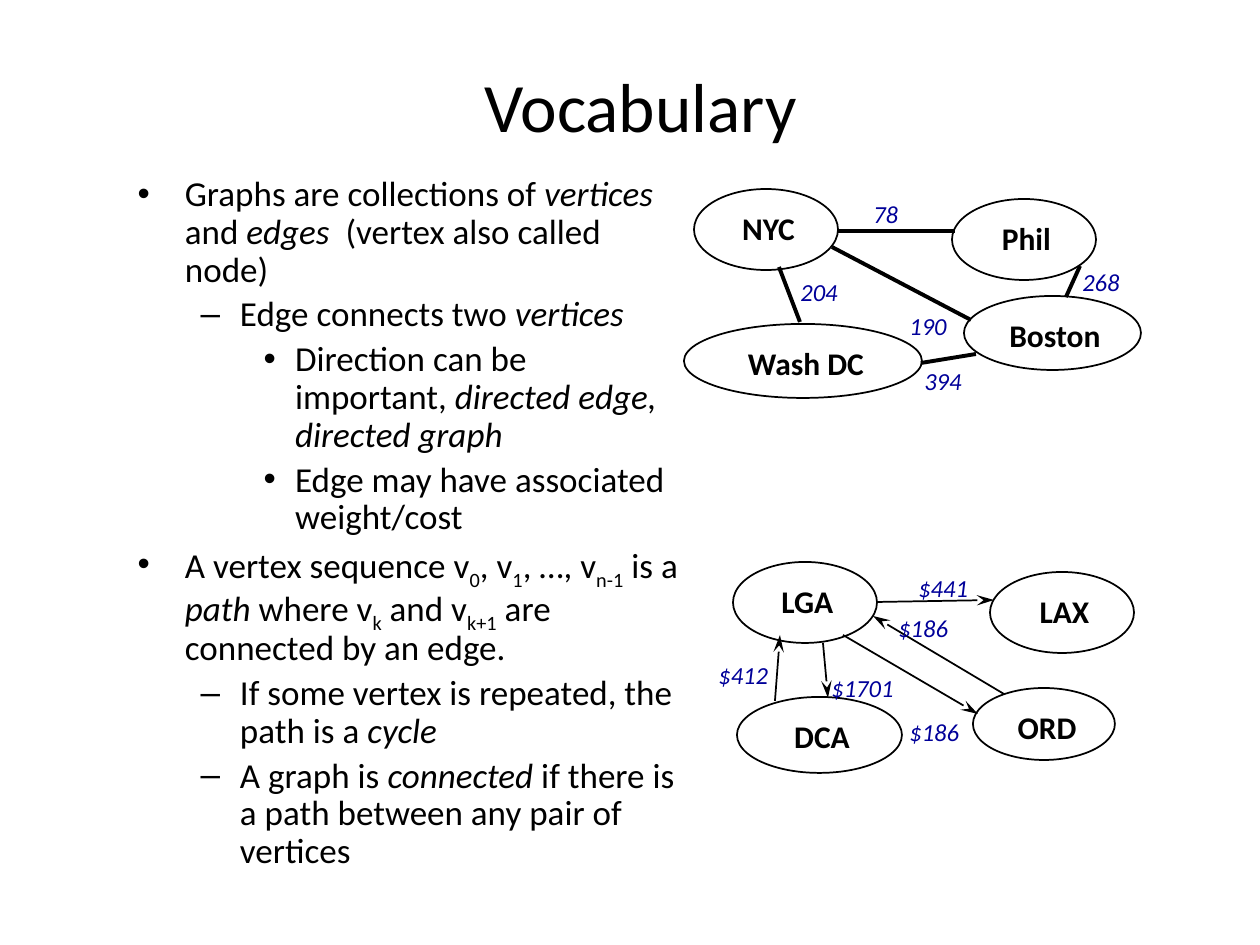
import pptx
import pptx.util
import pptx.dml.color
import pptx.enum.shapes
import pptx.enum.text
import pptx.oxml
import pptx.oxml.ns

PX = 914400 // 126
FONT = "Calibri"
BLACK = pptx.dml.color.RGBColor(0, 0, 0)
NAVY = pptx.dml.color.RGBColor(0, 0, 0x99)

TITLE = "Vocabulary"
ITALIC, SUB = "italic", "subscript"
# level, then spans: plain text or (text, style)
BULLETS = [
    (0, ["Graphs are collections of ", ("vertices", ITALIC), " and ", ("edges  ", ITALIC),
         "(vertex also called node)"]),
    (1, ["Edge connects two ", ("vertices", ITALIC)]),
    (2, ["Direction can be important, ", ("directed edge, directed graph", ITALIC)]),
    (2, ["Edge may have associated weight/cost"]),
    (0, ["A vertex sequence v", ("0", SUB), ", v", ("1", SUB), ", …, v", ("n-1", SUB), " is a ",
         ("path", ITALIC), " where v", ("k", SUB), " and v", ("k+1", SUB),
         " are connected by an edge."]),
    (1, ["If some vertex is repeated, the path is a ", ("cycle", ITALIC)]),
    (1, ["A graph is ", ("connected", ITALIC),
         " if there is a path between any pair of vertices"]),
]

# Vertices: name, left, top, width, height
# Edges: from x, from y, to x, to y
# Weights: text, left, top
DISTANCES = {
    "vertices": [("NYC", 694, 189, 144, 81), ("Phil", 952, 199, 144, 81),
                 ("Boston", 964, 296, 177, 74), ("Wash DC", 684, 324, 238, 74)],
    "edges": [(779, 267, 800, 322), (837, 231, 955, 231), (832, 247, 971, 320),
              (1080, 266, 1066, 297), (921, 363, 976, 354)],
    "weights": [("204", 788, 271), ("78", 861, 193), ("190", 897, 305),
                ("268", 1070, 261), ("394", 912, 360)],
    "line": 2.25, "directed": False,
}
FARES = {
    "vertices": [("LGA", 733, 562, 144, 81), ("LAX", 990, 572, 144, 81),
                 ("ORD", 973, 688, 142, 72), ("DCA", 737, 697, 165, 76)],
    "edges": [(823, 643, 828, 698), (843, 635, 978, 714), (877, 602, 994, 600),
              (1004, 694, 873, 616), (775, 701, 780, 635)],
    "weights": [("$186", 897, 711), ("$186", 886, 607), ("$412", 706, 654),
                ("$1701", 819, 667), ("$441", 906, 567)],
    "line": 1, "directed": True,
}


def place(shape, left, top, width, height):
    shape.left, shape.top = left * PX, top * PX
    shape.width, shape.height = width * PX, height * PX


def style(font, size, color=BLACK, bold=None, italic=None):
    font.name, font.size = FONT, pptx.util.Pt(size)
    font.color.rgb, font.bold, font.italic = color, bold, italic


def add_label(shapes, text, left, top, width, height, align, **look):
    box = shapes.add_textbox(left * PX, top * PX, width * PX, height * PX)
    box.text_frame.word_wrap = True
    box.text_frame.text = text
    para = box.text_frame.paragraphs[0]
    para.alignment = align
    style(para.runs[0].font, **look)


def add_vertex(page, name, left, top, width, height):
    group = page.shapes.add_group_shape()
    oval = group.shapes.add_shape(pptx.enum.shapes.MSO_SHAPE.OVAL,
                                  left * PX, top * PX, width * PX, height * PX)
    oval.shadow.inherit = False
    oval.fill.background()
    oval.line.color.rgb, oval.line.width = BLACK, pptx.util.Pt(1)
    label_width = round(width * 0.8)
    label_left = left + (width - label_width) // 2 + 3
    add_label(group.shapes, name, label_left, top + 14, label_width, 50,
              pptx.enum.text.PP_ALIGN.CENTER, size=18, bold=True)


def add_edge(page, ends, width, directed):
    edge = page.shapes.add_connector(pptx.enum.shapes.MSO_CONNECTOR.STRAIGHT,
                                     *[end * PX for end in ends])
    edge.line.color.rgb, edge.line.width = BLACK, pptx.util.Pt(width)
    if directed:
        head = pptx.oxml.parse_xml(
            f'<a:tailEnd {pptx.oxml.ns.nsdecls("a")} type="stealth" w="med" len="lg"/>')
        edge.line._get_or_add_ln().append(head)
    edge._element.spPr.append(
        pptx.oxml.parse_xml(f'<a:effectLst {pptx.oxml.ns.nsdecls("a")}/>'))


def add_graph(page, graph):
    for vertex in graph["vertices"]:
        add_vertex(page, *vertex)
    for ends in graph["edges"]:
        add_edge(page, ends, graph["line"], graph["directed"])
    for text, left, top in graph["weights"]:
        add_label(page.shapes, text, left, top, 103 if len(text) > 4 else 87, 42,
                  pptx.enum.text.PP_ALIGN.LEFT, size=14, color=NAVY, italic=True)


def fill_title(title):
    place(title, 105, 63, 1071, 84)
    title.text_frame.text = TITLE
    title.text_frame.auto_size = pptx.enum.text.MSO_AUTO_SIZE.NONE
    title.text_frame.vertical_anchor = pptx.enum.text.MSO_ANCHOR.MIDDLE
    style(title.text_frame.paragraphs[0].runs[0].font, 39.6)


def fill_body(body):
    place(body, 125, 170, 567, 743)
    frame = body.text_frame
    frame.auto_size = pptx.enum.text.MSO_AUTO_SIZE.NONE
    for index, (level, spans) in enumerate(BULLETS):
        para = frame.add_paragraph() if index else frame.paragraphs[0]
        para.level, para.line_spacing = level, 0.9
        for item in spans:
            text, look = (item, None) if isinstance(item, str) else item
            span = para.add_run()
            span.text = text
            style(span.font, 20, italic=look == ITALIC)
            if look == SUB:
                span.font._element.set("baseline", "-25000")


def main():
    deck = pptx.Presentation()
    deck.slide_width, deck.slide_height = pptx.util.Inches(10), pptx.util.Inches(7.5)
    page = deck.slides.add_slide(deck.slide_layouts[1])
    fill_title(page.shapes.title)
    fill_body(page.placeholders[1])
    for graph in (DISTANCES, FARES):
        add_graph(page, graph)
    deck.save("out.pptx")


if __name__ == "__main__":
    main()
